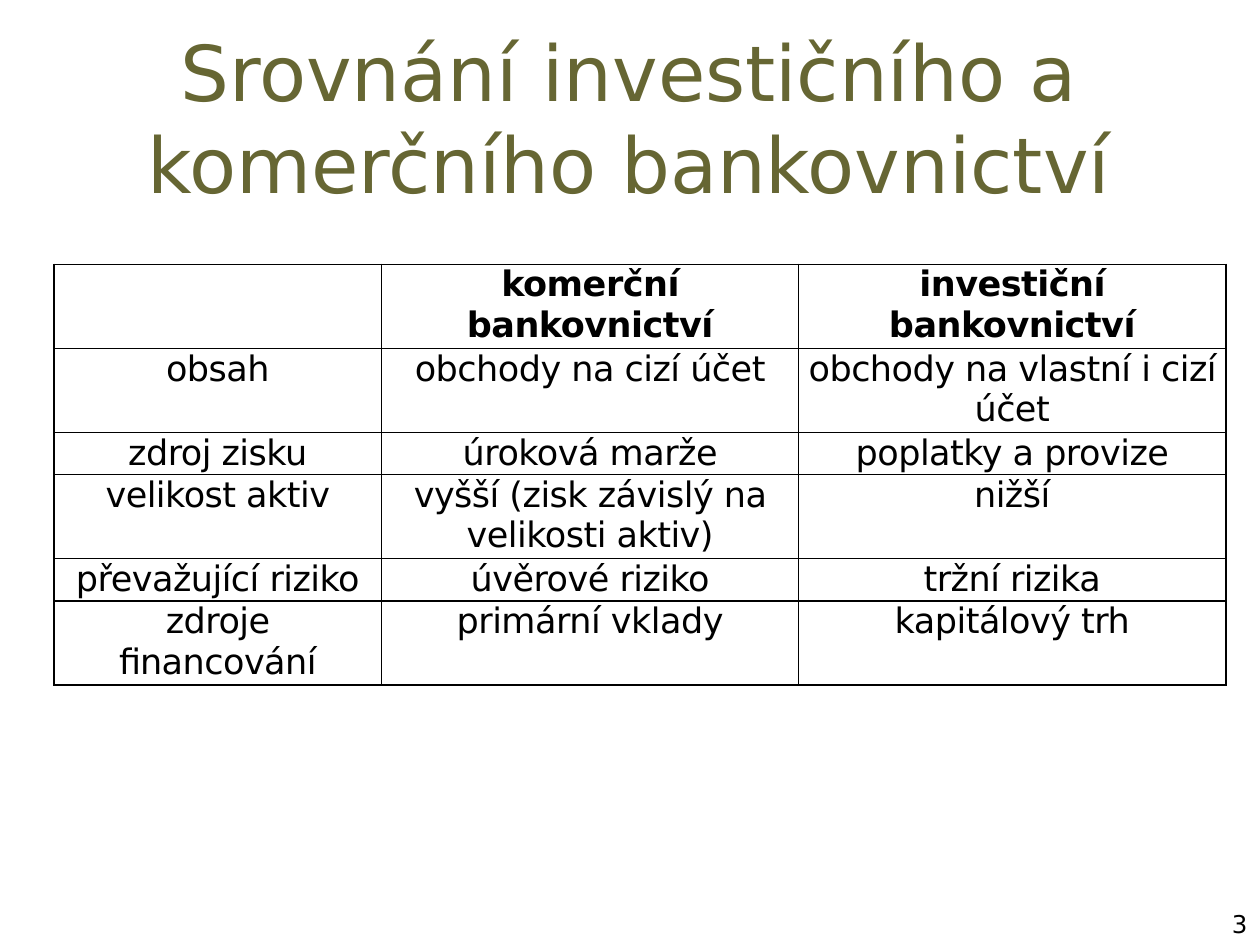
from lxml import etree
from pptx import Presentation
from pptx.dml.color import RGBColor
from pptx.enum.text import MSO_ANCHOR, PP_ALIGN
from pptx.oxml.ns import qn
from pptx.util import Cm, Pt

CENTER, RIGHT = PP_ALIGN.CENTER, PP_ALIGN.RIGHT
TOP, MIDDLE = MSO_ANCHOR.TOP, MSO_ANCHOR.MIDDLE
FONT = "DejaVu Sans"
BLACK, OLIVE = "000000", "666633"


def write(frame, text, size, color, align, bold=False):
    frame.word_wrap = True
    para = frame.paragraphs[0]
    para.alignment = align
    span = para.add_run()
    span.text = text
    para.font.name = FONT
    para.font.size = Pt(size)
    para.font.bold = bold
    para.font.color.rgb = RGBColor.from_string(color)
    return span


def add_borders(cell, color, width):
    properties = cell._tc.get_or_add_tcPr()
    for side in ("lnL", "lnR", "lnT", "lnB"):
        line = etree.SubElement(properties, qn("a:" + side), w=str(Pt(width)))
        fill = etree.SubElement(line, qn("a:solidFill"))
        etree.SubElement(fill, qn("a:srgbClr"), val=color)


deck = Presentation()
deck.slide_width, deck.slide_height = Cm(25.4), Cm(19.05)
page = deck.slides.add_slide(deck.slide_layouts[6])

# Slide number
box = page.shapes.add_textbox(Cm(19.48), Cm(18.21), Cm(5.92), Cm(0.84))
write(box.text_frame, "3", 14, BLACK, RIGHT)

# Title
box = page.shapes.add_textbox(Cm(1.07), Cm(0.76), Cm(23.24), Cm(3.18))
box.text_frame.vertical_anchor = MIDDLE
write(box.text_frame, "Srovnání investičního a komerčního bankovnictví",
      44, OLIVE, CENTER)

# Comparison table: each row height is a whole number of text lines
rows = [
    (2, "", "komerční bankovnictví", "investiční bankovnictví"),
    (2, "obsah", "obchody na cizí účet", "obchody na vlastní i cizí účet"),
    (1, "zdroj zisku", "úroková marže", "poplatky a provize"),
    (2, "velikost aktiv", "vyšší (zisk závislý na velikosti aktiv)", "nižší"),
    (1, "převažující riziko", "úvěrové riziko", "tržní rizika"),
    (2, "zdroje financování", "primární vklady", "kapitálový trh"),
]
widths = [6.6, 8.41, 8.61]
line_height = 0.82
total_height = line_height * sum(row[0] for row in rows)

table = page.shapes.add_table(
    len(rows), len(widths), Cm(1.09), Cm(5.33),
    Cm(sum(widths)), Cm(total_height)).table
table.first_row = table.horz_banding = False
for column, width in zip(table.columns, widths):
    column.width = Cm(width)

for r, (line_count, *texts) in enumerate(rows):
    table.rows[r].height = Cm(line_height * line_count)
    for c, text in enumerate(texts):
        cell = table.cell(r, c)
        cell.margin_left = cell.margin_right = Cm(0.18)
        cell.margin_top = cell.margin_bottom = 0
        cell.vertical_anchor = TOP
        add_borders(cell, BLACK, 1)
        cell.fill.background()
        if text:
            span = write(cell.text_frame, text, 20, BLACK, CENTER, bold=r == 0)
            span._r.get_or_add_rPr().set("spc", "-30")

deck.save("out.pptx")
